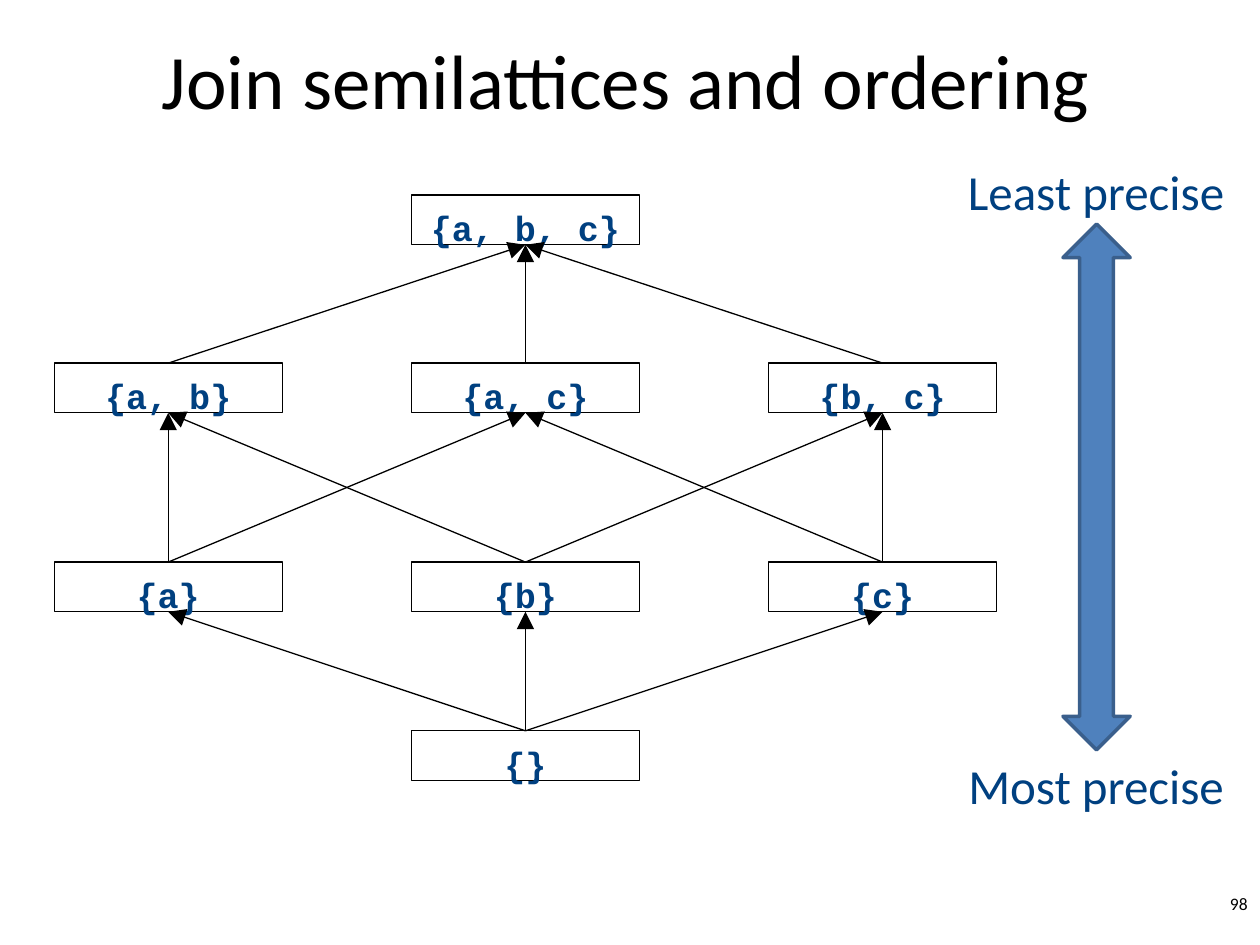
from dataclasses import dataclass
from lxml import etree
from pptx import Presentation
from pptx.dml.color import RGBColor as RGB
from pptx.enum.shapes import MSO_CONNECTOR as CONN, MSO_SHAPE as SHAPE
from pptx.enum.text import MSO_ANCHOR as ANCHOR, MSO_AUTO_SIZE as AUTO, PP_ALIGN as ALIGN
from pptx.oxml.ns import qn
from pptx.slide import Slide
from pptx.util import Pt

COLORS = {"ink": "000000", "label": "004080", "arrow": "4F81BD", "arrow_edge": "3A5F8C"}

BOX_W, BOX_H = 130.3, 28.4
LEFT, COL_STEP = 31, 204.1
LEVELS = [
    (417.6, {1: ""}),
    (321.2, {0: "a", 1: "b", 2: "c"}),
    (207.5, {0: "ab", 1: "ac", 2: "bc"}),
    (111.5, {1: "abc"}),
]


def color(name):
    return RGB.from_string(COLORS[name])


def write(sp, text, size, font="Calibri", fill="ink", bold=False, align=ALIGN.CENTER,
          anchor=ANCHOR.TOP, wrap=True):
    tf = sp.text_frame
    tf.word_wrap = wrap
    tf.vertical_anchor = anchor
    p = tf.paragraphs[0]
    p.alignment = align
    r = p.add_run()
    r.text = text
    r.font.size = Pt(size)
    r.font.name = font
    r.font.bold = bold
    r.font.color.rgb = color(fill)
    return tf


@dataclass
class Deck:
    slide: Slide
    line_width: float = 0.75

    def title(self, text, *box):
        sp = self.slide.shapes.title
        sp.left, sp.top, sp.width, sp.height = map(Pt, box)
        write(sp, text, 44, anchor=ANCHOR.MIDDLE)

    def text(self, text, *box, **fmt):
        return write(self.slide.shapes.add_textbox(*map(Pt, box)), text, **fmt)

    def caption(self, text, *box):
        tf = self.text(text, *box, size=28, fill="label", wrap=False)
        tf.auto_size = AUTO.SHAPE_TO_FIT_TEXT

    def shape(self, kind, *box, fill=None, line="ink", width=None):
        sp = self.slide.shapes.add_shape(kind, *map(Pt, box))
        sp.shadow.inherit = False
        if fill:
            sp.fill.solid()
            sp.fill.fore_color.rgb = color(fill)
        else:
            sp.fill.background()
        sp.line.color.rgb = color(line)
        sp.line.width = Pt(width or self.line_width)
        return sp

    def node(self, text, left, top):
        sp = self.shape(SHAPE.RECTANGLE, left, top, BOX_W, BOX_H)
        tf = write(sp, text, 20, font="Courier New", fill="label", bold=True)
        tf.margin_top, tf.margin_bottom = Pt(6.5), 0
        return sp

    def edge(self, lower, upper):
        cx = self.slide.shapes.add_connector(CONN.STRAIGHT, 0, 0, 0, 0)
        cx.begin_connect(lower, 0)
        cx.end_connect(upper, 2)
        cx.line.color.rgb = color("ink")
        cx.line.width = Pt(self.line_width)
        etree.SubElement(cx.line._get_or_add_ln(), qn("a:tailEnd"),
                         type="triangle", w="lg", len="lg")
        etree.SubElement(cx._element.spPr, qn("a:effectLst"))


def main():
    prs = Presentation()
    prs.slide_width, prs.slide_height = Pt(720), Pt(540)
    deck = Deck(prs.slides.add_slide(prs.slide_layouts[5]))

    deck.title("Join semilattices and ordering", 51.8, 0, 612, 90)
    deck.text("98", 570.2, 506.9, 149.8, 21.6, size=10, align=ALIGN.RIGHT)

    levels = [
        {items: deck.node("{" + ", ".join(items) + "}", LEFT + col * COL_STEP, top)
         for col, items in row.items()}
        for top, row in LEVELS
    ]
    for lower, upper in zip(levels, levels[1:]):
        for small, start in lower.items():
            for large, end in upper.items():
                if set(small) <= set(large):
                    deck.edge(start, end)

    deck.shape(SHAPE.UP_DOWN_ARROW, 607.4, 128, 38.4, 300.5,
               fill="arrow", line="arrow_edge", width=2)
    deck.caption("Least precise", 545, 88.6, 162.7, 41)
    deck.caption("Most precise", 545, 428.4, 162.7, 41)
    prs.save("out.pptx")


if __name__ == "__main__":
    main()
